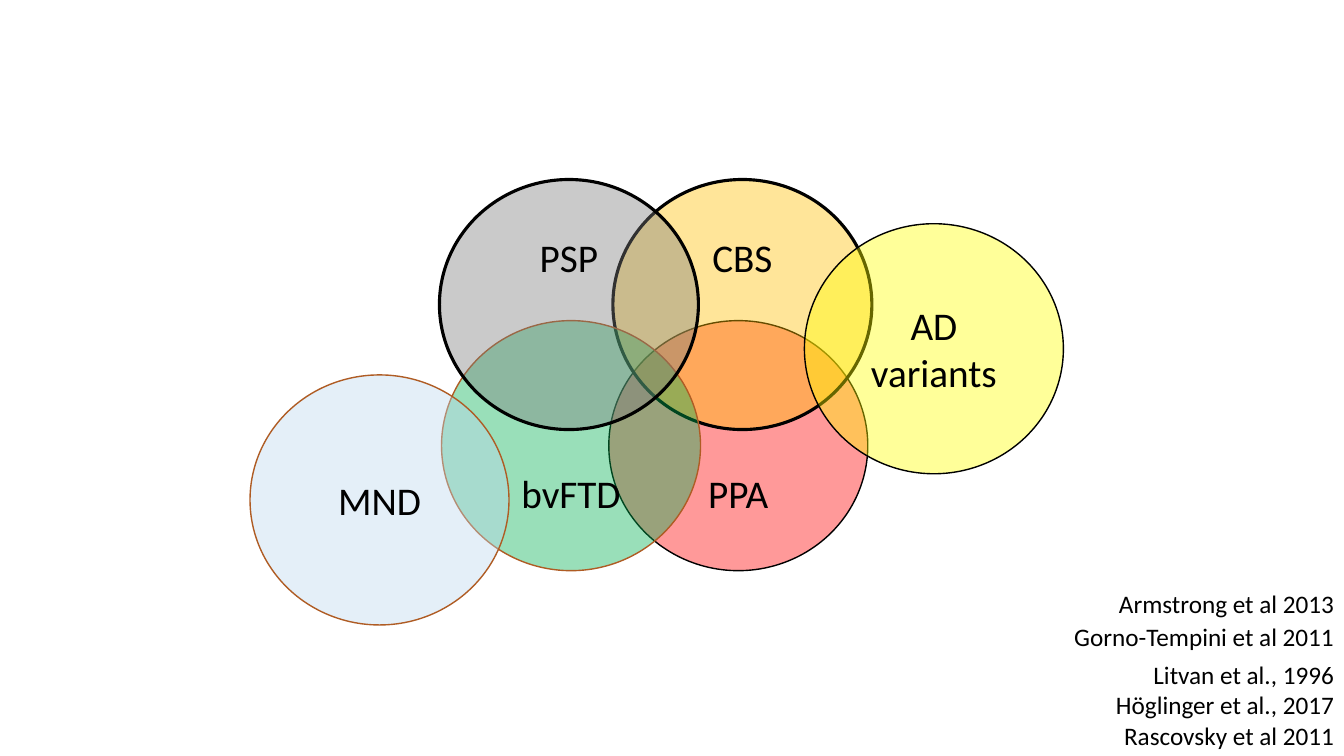
from dataclasses import dataclass

from lxml.etree import SubElement
from pptx import Presentation
from pptx.dml.color import RGBColor
from pptx.enum.shapes import MSO_SHAPE
from pptx.enum.text import MSO_ANCHOR, MSO_AUTO_SIZE, PP_ALIGN
from pptx.oxml.ns import qn
from pptx.util import Pt


@dataclass(frozen=True)
class Theme:
    font: str = "Calibri"
    label: float = 28
    cite: float = 18
    black: str = "000000"
    brown: str = "AF5C24"
    red: str = "FF0000"
    gold: str = "FFC000"
    green: str = "00B050"
    gray: str = "7C7C7C"
    blue: str = "BDD7EE"
    yellow: str = "FFFF00"
    alpha: int = 40000
    thin: float = 1
    thick: float = 2.25


@dataclass(frozen=True)
class Disc:
    text: str
    left: float
    top: float
    fill: str
    line: str
    weight: float
    shift: float = 0


@dataclass(frozen=True)
class Cite:
    text: str
    top: float
    width: float = 180.7
    height: float = 28.8


THEME = Theme()
WIDTH, HEIGHT = 960, 540
DISC_W, DISC_H = 185, 178.6
ROW = 34
PAD = 3.6
HIGH, LOW = 128.2, 229

DISCS = [
    Disc("PPA", 434.9, LOW, THEME.red, THEME.black, THEME.thin, ROW),
    Disc("CBS", 437.8, HIGH, THEME.gold, THEME.black, THEME.thick, -ROW),
    Disc("bvFTD", 315.4, LOW, THEME.green, THEME.brown, THEME.thin, ROW),
    Disc("PSP", 313.9, HIGH, THEME.gray, THEME.black, THEME.thick, -ROW),
    Disc("MND", 178.6, 267.8, THEME.blue, THEME.brown, THEME.thin),
    Disc("AD\nvariants", 574.6, 159.8, THEME.yellow, THEME.black, THEME.thin),
]
CITES = [
    Cite("Gorno-Tempini et al 2011", 440.6, width=265.7),
    Cite("Rascovsky et al 2011", 511.2),
    Cite("Armstrong et al 2013", 416.9),
    Cite("Litvan et al., 1996\nHöglinger et al., 2017", 467.3, height=51.1),
]


def set_text(frame, text: str, size: float, align: PP_ALIGN) -> None:
    frame.text = text
    for para in frame.paragraphs:
        para.alignment = align
        for run in para.runs:
            run.font.name = THEME.font
            run.font.size = Pt(size)
            run.font.color.rgb = RGBColor.from_string(THEME.black)


def draw_disc(slide, disc: Disc) -> None:
    shape = slide.shapes.add_shape(
        MSO_SHAPE.OVAL, Pt(disc.left), Pt(disc.top), Pt(DISC_W), Pt(DISC_H)
    )
    shape.shadow.inherit = False
    shape.fill.solid()
    shape.fill.fore_color.rgb = RGBColor.from_string(disc.fill)
    tint = next(shape.element.spPr.iter(qn("a:srgbClr")))
    SubElement(tint, qn("a:alpha")).set("val", str(THEME.alpha))
    shape.line.color.rgb = RGBColor.from_string(disc.line)
    shape.line.width = Pt(disc.weight)
    frame = shape.text_frame
    frame.word_wrap = False
    frame.vertical_anchor = MSO_ANCHOR.MIDDLE
    frame.margin_left = frame.margin_right = 0
    frame.margin_top = Pt(PAD + max(0, 2 * disc.shift))
    frame.margin_bottom = Pt(PAD + max(0, -2 * disc.shift))
    set_text(frame, disc.text, THEME.label, PP_ALIGN.CENTER)


def draw_cite(slide, cite: Cite) -> None:
    box = slide.shapes.add_textbox(
        Pt(WIDTH - cite.width), Pt(cite.top), Pt(cite.width), Pt(cite.height)
    )
    frame = box.text_frame
    frame.word_wrap = True
    frame.auto_size = MSO_AUTO_SIZE.SHAPE_TO_FIT_TEXT
    set_text(frame, cite.text, THEME.cite, PP_ALIGN.RIGHT)


def main() -> None:
    deck = Presentation()
    deck.slide_width, deck.slide_height = Pt(WIDTH), Pt(HEIGHT)
    slide = deck.slides.add_slide(deck.slide_layouts[6])
    for disc in DISCS[:4]:
        draw_disc(slide, disc)
    for cite in CITES:
        draw_cite(slide, cite)
    for disc in DISCS[4:]:
        draw_disc(slide, disc)
    deck.save("out.pptx")


if __name__ == "__main__":
    main()
